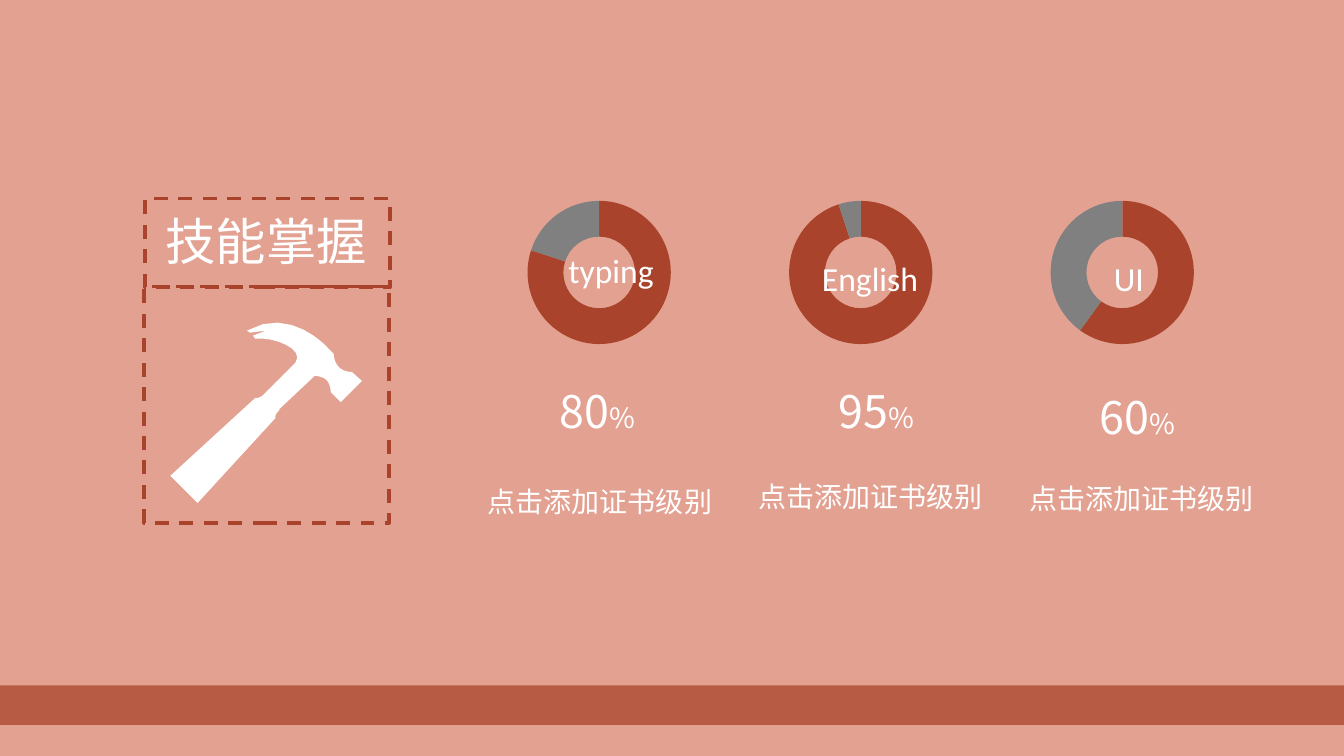
"""Build a skills slide with a hammer panel and three doughnut charts."""
from dataclasses import dataclass

from lxml import etree
from pptx import Presentation
from pptx.chart.data import CategoryChartData
from pptx.dml.color import RGBColor
from pptx.enum.chart import XL_CHART_TYPE
from pptx.enum.dml import MSO_LINE
from pptx.enum.shapes import MSO_SHAPE
from pptx.enum.text import MSO_ANCHOR, PP_ALIGN
from pptx.oxml.ns import qn
from pptx.util import Inches, Pt

DOUGHNUT = XL_CHART_TYPE.DOUGHNUT
DASH = MSO_LINE.DASH
RECTANGLE = MSO_SHAPE.RECTANGLE
TOP = MSO_ANCHOR.TOP
LEFT = PP_ALIGN.LEFT


@dataclass(frozen=True)
class Theme:
    background: RGBColor = RGBColor(0xE3, 0xA1, 0x92)
    accent: RGBColor = RGBColor(0xA9, 0x43, 0x2B)
    rest: RGBColor = RGBColor(0x80, 0x80, 0x80)
    white: RGBColor = RGBColor(0xFF, 0xFF, 0xFF)
    black: RGBColor = RGBColor(0, 0, 0)
    text_font: str = "Noto Sans CJK SC"
    chart_font: str = "Calibri"
    title: Pt = Pt(36)
    number: Pt = Pt(32)
    chart_title: Pt = Pt(24)
    caption: Pt = Pt(20)
    chart_text: Pt = Pt(10)
    border: Pt = Pt(2.5)


theme = Theme()
deck = Presentation()
deck.slide_width, deck.slide_height = Inches(13.33), Inches(7.5)
column, row = deck.slide_width / 100, deck.slide_height / 100
slide = deck.slides.add_slide(deck.slide_layouts[5])
slide.background.fill.solid()
slide.background.fill.fore_color.rgb = theme.background


def write(box, area, spans):
    """Place a box on the percent grid and write its sized spans."""
    left, top, width, height = area
    box.left, box.width = int(left * column), int(width * column)
    box.top, box.height = int(top * row), int(height * row)
    frame = box.text_frame
    frame.word_wrap = True
    frame.vertical_anchor = TOP
    para = frame.paragraphs[0]
    para.alignment = LEFT
    para.font.color.rgb = theme.white
    para.font.name = theme.text_font
    para.font.size = spans[0][1]
    defaults = para._p.pPr.find(qn("a:defRPr"))
    etree.SubElement(defaults, qn("a:ea"), typeface=theme.text_font)
    for text, size in spans:
        span = para.add_run()
        span.text = text
        span.font.size = size


def set_layout(parent, index, **shares):
    """Set a manual layout, in shares of the chart, on a chart part."""
    for old in parent.findall(qn("c:layout")):
        parent.remove(old)
    layout = etree.Element(qn("c:layout"))
    parent.insert(index, layout)
    manual = etree.SubElement(layout, qn("c:manualLayout"))
    if "w" in shares:
        etree.SubElement(manual, qn("c:layoutTarget"), val="inner")
    for axis in "xy":
        etree.SubElement(manual, qn(f"c:{axis}Mode"), val="edge")
    for name, share in shares.items():
        etree.SubElement(manual, qn(f"c:{name}"), val=str(share))


for left, top, height in ((10.73, 37.87, 31.33), (10.8, 26.27, 11.73)):
    panel = slide.shapes.add_shape(
        RECTANGLE, int(left * column), int(top * row), int(18.23 * column), int(height * row))
    panel.shadow.inherit = False
    panel.fill.background()
    panel.line.color.rgb = theme.accent
    panel.line.width = theme.border
    panel.line.dash_style = DASH

write(slide.shapes.title, (11.55, 27.07, 18.83, 9.47), [("技能掌握", theme.title)])

HAMMER_START = (336, 364)
HAMMER = [
    [(333, 361), (331, 356), (331, 351)], [(325, 345)],
    [(325, 345), (288, 303), (245, 328)], [(248, 330)], [(264, 328)], [(251, 333)], [(253, 336)],
    [(271, 334), (303, 346), (293, 360)], [(261, 392)],
    [(259, 394), (256, 395), (253, 395)], [(169, 472)], [(196, 499)], [(273, 415)],
    [(273, 411), (275, 409), (277, 407)], [(277, 406)], [(312, 373)],
    [(316, 373), (320, 374), (324, 377)], [(327, 381), (328, 385), (328, 389)],
    [(338, 399)], [(359, 378)], [(349, 369)], [(345, 369), (340, 368), (336, 364)],
]
STEPS = 8
outline = [HAMMER_START]
for segment in HAMMER:
    if len(segment) == 1:
        outline += segment
        continue
    corners = [outline[-1], *segment]
    for step in range(1, STEPS + 1):
        t = step / STEPS
        weights = ((1 - t) ** 3, 3 * t * (1 - t) ** 2, 3 * t * t * (1 - t), t ** 3)
        outline.append(tuple(
            sum(weight * corner[axis] for weight, corner in zip(weights, corners))
            for axis in (0, 1)))
points = [(x * 10, y * 10) for x, y in outline]
builder = slide.shapes.build_freeform(*points[0], scale=Inches(1) / 1000)
builder.add_line_segments(points[1:], close=True)
hammer = builder.convert_to_shape()
hammer.shadow.inherit = False
hammer.fill.solid()
hammer.fill.fore_color.rgb = theme.white
hammer.line.fill.background()

SKILLS = [
    ("typing", 80, (0.38, 0.52), (40.88, 50.13), 63.47),
    ("English", 95, (0.355, 0.55), (61.65, 50.13), 62.8),
    ("UI", 60, (0.45, 0.55), (81.08, 50.93), 63.07),
]
for index, (skill, level, name_at, number_at, caption_top) in enumerate(SKILLS):
    data = CategoryChartData()
    data.categories = ["1", "2"]
    data.add_series(skill, (level, 100 - level))
    chart = slide.shapes.add_chart(
        DOUGHNUT, int((32.78 + 19.46 * index) * column), int(15.33 * row),
        int(23.85 * column), int(32.13 * row), data).chart
    chart.has_legend = False
    chart.font.name = theme.chart_font
    chart.font.size = theme.chart_text
    chart.font.color.rgb = theme.black
    plot = chart.plots[0]
    plot.vary_by_categories = True
    for number, color in enumerate((theme.accent, theme.rest)):
        part = plot.series[0].points[number].format
        part.fill.solid()
        part.fill.fore_color.rgb = color
        part.line.fill.background()
    heading = chart.chart_title.text_frame
    heading.text = skill
    font = heading.paragraphs[0].font
    font.name = theme.chart_font
    font.size = theme.chart_title
    font.bold = False
    font.color.rgb = theme.white
    space = chart._chartSpace
    title = space.find(".//" + qn("c:title"))
    set_layout(title, 1, x=name_at[0], y=name_at[1])
    title.find(qn("c:overlay")).set("val", "1")
    set_layout(space.find(".//" + qn("c:plotArea")), 0, x=0.27, y=0.35, w=0.45, h=0.59)
    space.find(".//" + qn("c:holeSize")).set("val", "75")

    write(slide.shapes.add_textbox(0, 0, 0, 0), (*number_at, 7.73, 8.53),
          [(str(level), theme.number), ("%", theme.caption)])
    write(slide.shapes.add_textbox(0, 0, 0, 0),
          (35.55 + 20.14 * index, caption_top, 18.98, 5.87),
          [("点击添加证书级别", theme.caption)])

band = slide.shapes.add_shape(
    RECTANGLE, 0, int(90.67 * row), deck.slide_width, int(5.2 * row))
band.shadow.inherit = False
band.fill.solid()
band.fill.fore_color.rgb = theme.accent
band.line.fill.background()
band_color = band._element.spPr.find(".//" + qn("a:srgbClr"))
etree.SubElement(band_color, qn("a:alpha"), val="74000")

deck.save("out.pptx")
